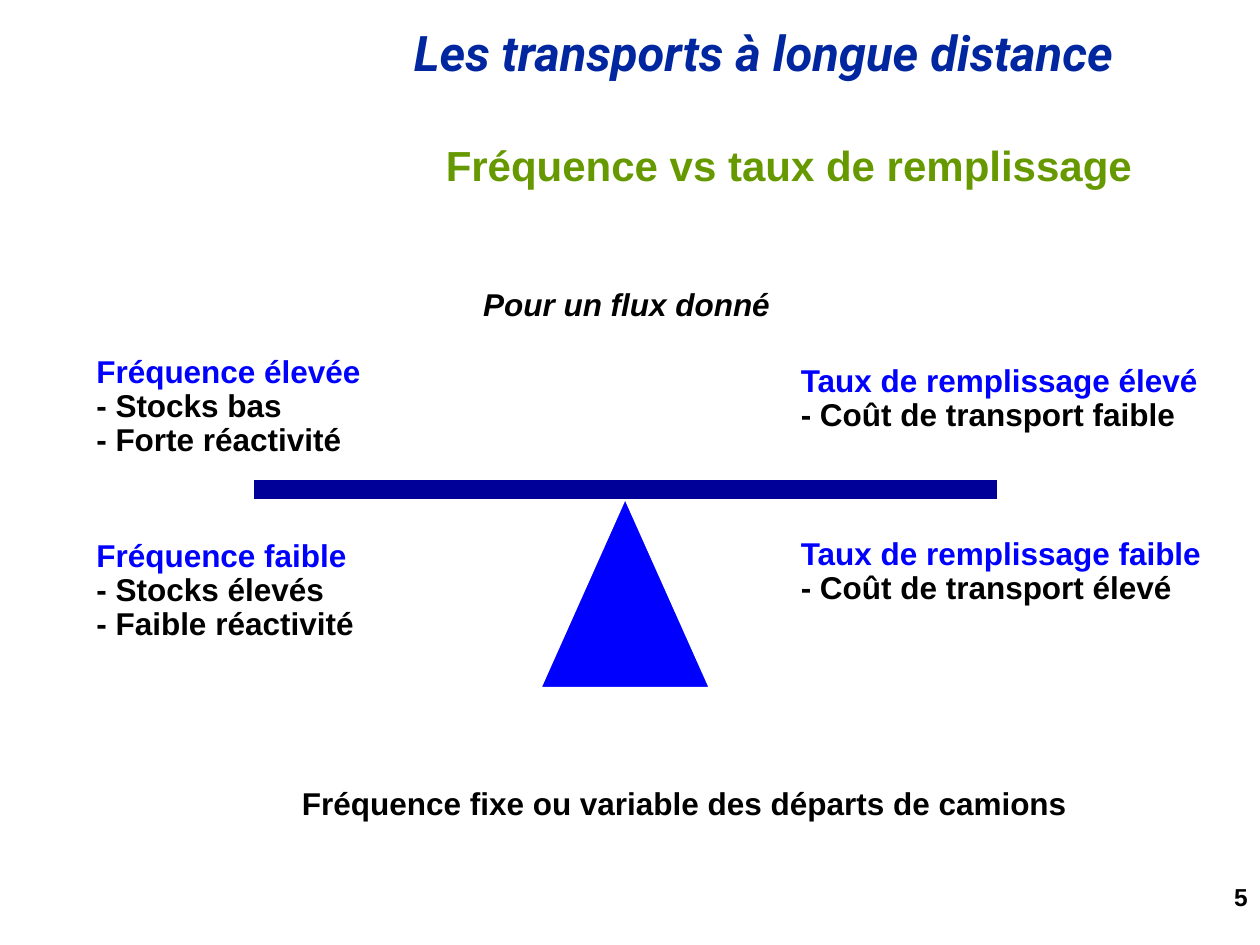
import pptx
import pptx.dml.color
import pptx.enum.shapes
import pptx.enum.text
import pptx.util

Pt = pptx.util.Pt
RGBColor = pptx.dml.color.RGBColor
ALIGN = pptx.enum.text.PP_ALIGN
ANCHOR = pptx.enum.text.MSO_ANCHOR
SHAPE = pptx.enum.shapes.MSO_SHAPE

NAVY = RGBColor(0x00, 0x27, 0x9F)
GREEN = RGBColor(0x66, 0x99, 0x00)
BLUE = RGBColor(0x00, 0x00, 0xFF)
DARK_BLUE = RGBColor(0x00, 0x00, 0x99)
BLACK = RGBColor(0x00, 0x00, 0x00)
WHITE = RGBColor(0xFF, 0xFF, 0xFF)


def add_text(page, box, paragraphs, size=18, font="Arial", italic=False,
             align=ALIGN.LEFT, anchor=ANCHOR.TOP, wrap=True):
    """Write bold paragraphs, each a colour and its lines, in a box."""
    frame = page.shapes.add_textbox(*map(Pt, box)).text_frame
    frame.word_wrap = wrap
    frame.vertical_anchor = anchor
    for index, (color, lines) in enumerate(paragraphs):
        para = frame.add_paragraph() if index else frame.paragraphs[0]
        para.alignment = align
        para.line_spacing = 0.9
        for number, line in enumerate(lines):
            if number:
                para.add_line_break()
            span = para.add_run()
            span.text = line
            span.font.name = font
            span.font.size = Pt(size)
            span.font.bold = True
            span.font.italic = italic
            span.font.color.rgb = color


def add_solid(page, kind, box, color):
    """Draw a filled shape with a thin white outline."""
    solid = page.shapes.add_shape(kind, *map(Pt, box))
    solid.shadow.inherit = False
    solid.fill.solid()
    solid.fill.fore_color.rgb = color
    solid.line.color.rgb = WHITE
    solid.line.width = Pt(1)


def add_header(page, left, top, width):
    """Place the course heading and the slide title."""
    add_text(page, (left + 145.5, top, width - 145.5, 37.5),
             [(NAVY, ["Les transports à longue distance"])],
             size=28, font="Roboto", italic=True)
    add_text(page, (left, top + 65, 570, 36),
             [(GREEN, ["Fréquence vs taux de remplissage"])],
             size=24, align=ALIGN.RIGHT, anchor=ANCHOR.MIDDLE)


def add_balance(page, left, top, width, height):
    """Draw the beam resting on its centred pivot."""
    pivot_width, pivot_height, beam_height = 96.5, 108, 11.5
    add_solid(page, SHAPE.ISOSCELES_TRIANGLE,
              (left + (width - pivot_width) / 2, top + height - pivot_height,
               pivot_width, pivot_height), BLUE)
    add_solid(page, SHAPE.RECTANGLE, (left, top, width, beam_height), DARK_BLUE)


def add_arguments(page, left, top):
    """Place the four headed lists around the balance."""
    right = left + 402.5
    lists = [
        (left, top, 165.5, "Fréquence élevée", ["- Stocks bas", "- Forte réactivité"]),
        (right, top + 5, 242.5, "Taux de remplissage élevé", ["- Coût de transport faible"]),
        (left, top + 105, 161.5, "Fréquence faible", ["- Stocks élevés", "- Faible réactivité"]),
        (right, top + 104, 245, "Taux de remplissage faible", ["- Coût de transport élevé"]),
    ]
    for x, y, width, heading, effects in lists:
        height = 26.5 + 19.5 * len(effects)
        add_text(page, (x, y, width, height),
                 [(BLUE, [heading]), (BLACK, effects)], wrap=False)


def add_remarks(page, left, top):
    """Place the premise above the balance and the conclusion below it."""
    add_text(page, (left + 103.5, top, 178.5, 26.5),
             [(BLACK, ["Pour un flux donné"])], italic=True, wrap=False)
    add_text(page, (left, top + 285, 451.5, 26.5),
             [(BLACK, ["Fréquence fixe ou variable des départs de camions"])],
             wrap=False)


def add_page_number(page, right, top):
    """Place the page number against the right edge."""
    add_text(page, (right - 162, top, 162, 29), [(BLACK, ["5"])],
             size=14, align=ALIGN.RIGHT)


def main():
    """Build the slide and save the deck."""
    deck = pptx.Presentation()
    deck.slide_width, deck.slide_height = Pt(720), Pt(540)
    page = deck.slides.add_slide(deck.slide_layouts[6])
    add_header(page, 84, 13, 636)
    add_balance(page, 144.5, 274, 425.5, 119)
    add_arguments(page, 48, 200)
    add_remarks(page, 165.5, 162)
    add_page_number(page, 720, 502.5)
    deck.save("out.pptx")


if __name__ == "__main__":
    main()
